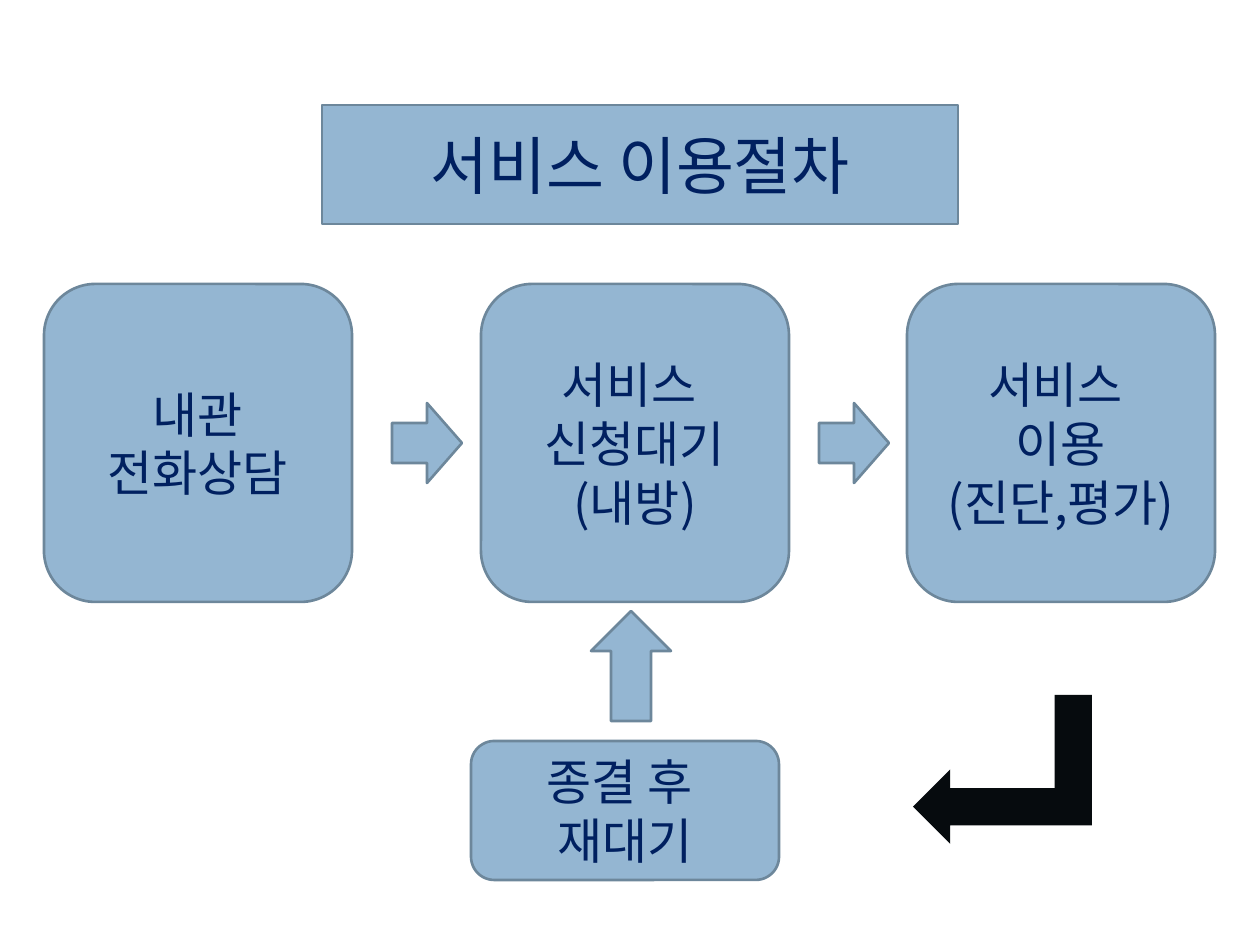
"""Build a one-slide flow chart of the steps for using a service."""
from lxml import etree
from pptx import Presentation
from pptx.dml.color import RGBColor
from pptx.enum.shapes import MSO_SHAPE
from pptx.enum.text import MSO_ANCHOR, PP_ALIGN
from pptx.oxml.ns import qn
from pptx.util import Pt

RECT, ROUND = MSO_SHAPE.RECTANGLE, MSO_SHAPE.ROUNDED_RECTANGLE
RIGHT, UP = MSO_SHAPE.RIGHT_ARROW, MSO_SHAPE.UP_ARROW
BENT = MSO_SHAPE.BENT_UP_ARROW
MIDDLE, CENTER = MSO_ANCHOR.MIDDLE, PP_ALIGN.CENTER

THEME = {
    "face": "Noto Sans CJK KR",
    "ink": RGBColor.from_string("002060"),
    "fill": RGBColor.from_string("94B6D2"),
    "edge": RGBColor.from_string("6D879B"),
    "dark": RGBColor.from_string("060B0E"),
    "title": Pt(36),
    "body": Pt(28),
    "line": Pt(1.5),
}
SCALE = 914400 / 126
WIDE, HIGH = 1260, 945
STEP_TOP, STEP_W, STEP_H = 284, 308, 318
ARROW_W, ARROW_H = 70, 80

TITLE = ("서비스 이용절차", (322, 105, 636, 119))
STEPS = [
    (44, "내관\n전화상담"),
    (481, "서비스 \n신청대기(내방)"),
    (907, "서비스 \n이용\n(진단,평가)"),
]
LAST = ("종결 후 \n재대기", (471, 741, STEP_W, 139))
NEXT = [392, 819]
BACK = (591, 611, ARROW_H, 110)
TURN = (928, 680, 149, 179)


def emu(px):
    return round(px * SCALE)


def add(slide, kind, box, fill="fill", edge="edge"):
    shape = slide.shapes.add_shape(kind, *map(emu, box))
    shape.shadow.inherit = False
    shape.fill.solid()
    shape.fill.fore_color.rgb = THEME[fill]
    shape.line.color.rgb = THEME[edge]
    shape.line.width = THEME["line"]
    return shape


def write(shape, text, size):
    frame = shape.text_frame
    frame.text = text
    frame.word_wrap = True
    frame.vertical_anchor = MIDDLE
    style = {"name": THEME["face"], "size": THEME[size]}
    for para in frame.paragraphs:
        para.alignment = CENTER
        for run in para.runs:
            for key, value in style.items():
                setattr(run.font, key, value)
            run.font.color.rgb = THEME["ink"]
            east = etree.Element(qn("a:ea"), typeface=THEME["face"])
            run.font._element.find(qn("a:latin")).addnext(east)


def main():
    deck = Presentation()
    deck.slide_width, deck.slide_height = emu(WIDE), emu(HIGH)
    slide = deck.slides.add_slide(deck.slide_layouts[6])

    for left, text in STEPS:
        box = (left, STEP_TOP, STEP_W, STEP_H)
        write(add(slide, ROUND, box), text, "body")
    text, box = LAST
    write(add(slide, ROUND, box), text, "body")

    top = STEP_TOP + (STEP_H - ARROW_H) / 2
    for left in NEXT:
        add(slide, RIGHT, (left, top, ARROW_W, ARROW_H))

    text, box = TITLE
    write(add(slide, RECT, box), text, "title")

    turn = add(slide, BENT, TURN, "dark", "dark")
    turn.line.fill.background()
    turn.rotation = 90
    turn.element.spPr.find(qn("a:xfrm")).set("flipV", "1")
    add(slide, UP, BACK)

    deck.save("out.pptx")


if __name__ == "__main__":
    main()
